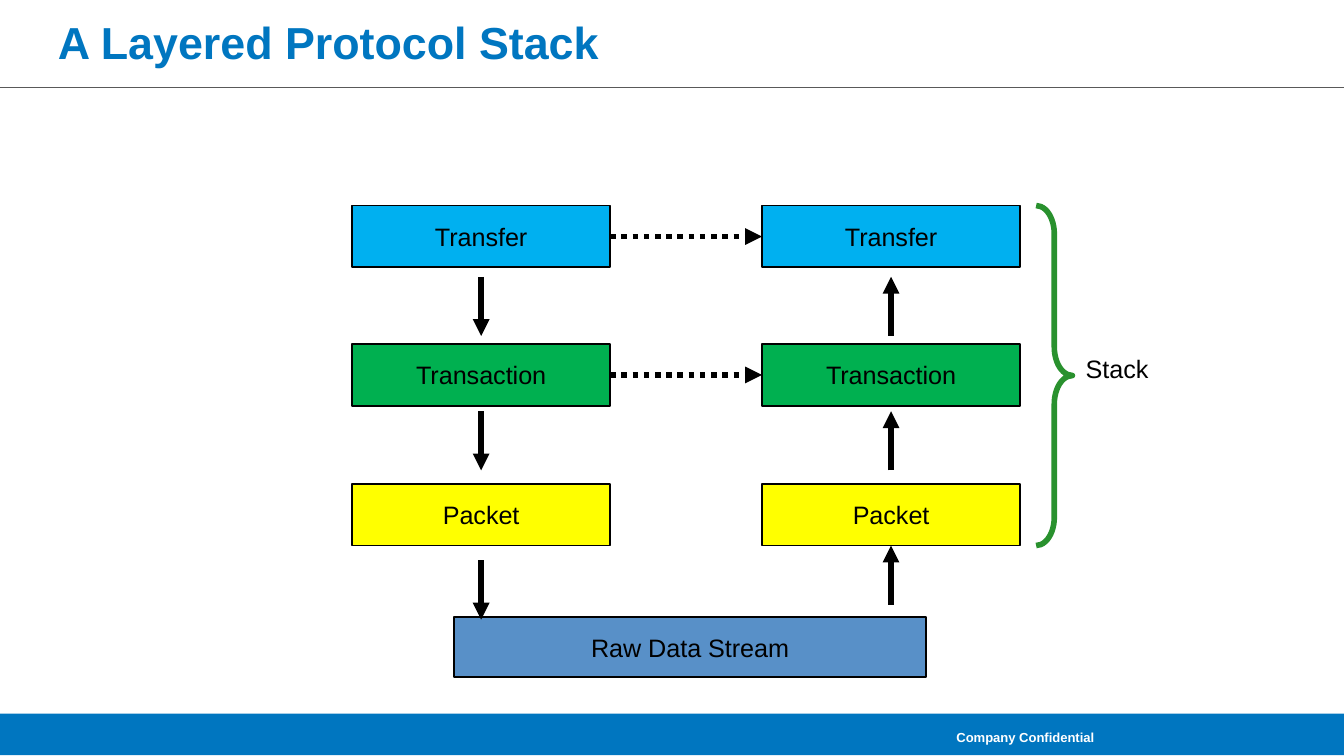
from pptx import Presentation
from pptx.dml.color import RGBColor
from pptx.enum.dml import MSO_LINE
from pptx.enum.shapes import MSO_CONNECTOR, MSO_SHAPE
from pptx.enum.text import MSO_ANCHOR, PP_ALIGN
from pptx.oxml.ns import qn
from pptx.util import Inches, Pt
from lxml.etree import SubElement

BLUE = "0076C0"
BLACK = "000000"
LAYERS = [("Transfer", "00B0F0", 1.53), ("Transaction", "00B050", 2.56), ("Packet", "FFFF00", 3.6)]
LEFT, RIGHT = 2.62, 5.67
WIDE, HIGH = 1.92, 0.46


def color(code):
    return RGBColor.from_string(code)


def write(shape, text, size=13.5, ink=BLACK, bold=False, align=PP_ALIGN.CENTER,
          anchor=MSO_ANCHOR.MIDDLE, wrap=False):
    frame = shape.text_frame
    frame.word_wrap = wrap
    frame.vertical_anchor = anchor
    para = frame.paragraphs[0]
    para.alignment = align
    run = para.add_run()
    run.text = text
    font = run.font
    font.name, font.size, font.bold = "Arial", Pt(size), bold
    font.color.rgb = color(ink)


def add_text(slide, area, text, **style):
    box = slide.shapes.add_textbox(*map(Inches, area))
    write(box, text, **style)


def add_shape(slide, kind, area, fill=None, line=None, width=1):
    shape = slide.shapes.add_shape(kind, *map(Inches, area))
    shape.shadow.inherit = False
    if fill:
        shape.fill.solid()
        shape.fill.fore_color.rgb = color(fill)
    else:
        shape.fill.background()
    if line:
        shape.line.color.rgb = color(line)
        shape.line.width = Pt(width)
    else:
        shape.line.fill.background()
    return shape


def add_box(slide, area, text, fill):
    box = add_shape(slide, MSO_SHAPE.RECTANGLE, area, fill, BLACK)
    write(box, text)
    return box


def add_line(slide, start, end, ink=BLACK, width=3, arrow=True):
    line = slide.shapes.add_connector(MSO_CONNECTOR.STRAIGHT, *map(Inches, start + end))
    line.line.color.rgb = color(ink)
    line.line.width = Pt(width)
    if arrow:
        SubElement(line.line._get_or_add_ln(), qn("a:tailEnd"), type="triangle")
    SubElement(line._element.spPr, qn("a:effectLst"))
    return line


def add_stack(slide, left):
    return [add_box(slide, (left, top, WIDE, HIGH), name, fill) for name, fill, top in LAYERS]


def add_flow(slide, send, get):
    down, up = LEFT + WIDE / 2, RIGHT + WIDE / 2
    for top in (2.06, 3.06, 4.17):
        add_line(slide, (down, top), (down, top + 0.44))
    for top in (2.06, 3.06, 4.06):
        line = add_line(slide, (up, top + 0.44), (up, top))
    line.end_connect(get[-1], 2)
    for first, last in zip(send[:2], get):
        line = add_line(slide, (LEFT + WIDE, 2), (RIGHT, 2))
        line.line.dash_style = MSO_LINE.ROUND_DOT
        line.begin_connect(first, 3)
        line.end_connect(last, 1)


def add_frame(slide):
    add_shape(slide, MSO_SHAPE.RECTANGLE, (0, 5.31, 10, 0.31), BLUE)
    add_line(slide, (0, 0.65), (10, 0.65), "595959", 0.75, False)
    title = slide.shapes.title
    title.left, title.top, title.width, title.height = map(Inches, (0.33, 0.06, 9.42, 0.5))
    write(title, "A Layered Protocol Stack", size=24, ink=BLUE, bold=True,
          align=PP_ALIGN.LEFT, wrap=True)
    add_text(slide, (5, 5.35, 3.24, 0.27), "Company Confidential", size=7, ink="FFFFFF",
             bold=True, align=PP_ALIGN.RIGHT, wrap=True)


def main():
    deck = Presentation()
    deck.slide_width = Inches(10)
    deck.slide_height = deck.slide_width * 9 // 16
    slide = deck.slides.add_slide(deck.slide_layouts[5])
    add_frame(slide)
    add_box(slide, (3.38, 4.59, 3.51, 0.45), "Raw Data Stream", "5890C8")
    send, get = add_stack(slide, LEFT), add_stack(slide, RIGHT)
    add_flow(slide, send, get)
    brace = add_shape(slide, MSO_SHAPE.RIGHT_BRACE, (7.71, 1.53, 0.27, 2.53), line="29912E", width=3)
    brace.adjustments[0] = 0.78
    add_text(slide, (7.98, 2.58, 0.68, 0.33), "Stack", align=PP_ALIGN.LEFT, anchor=MSO_ANCHOR.TOP)
    deck.save("out.pptx")


if __name__ == "__main__":
    main()
